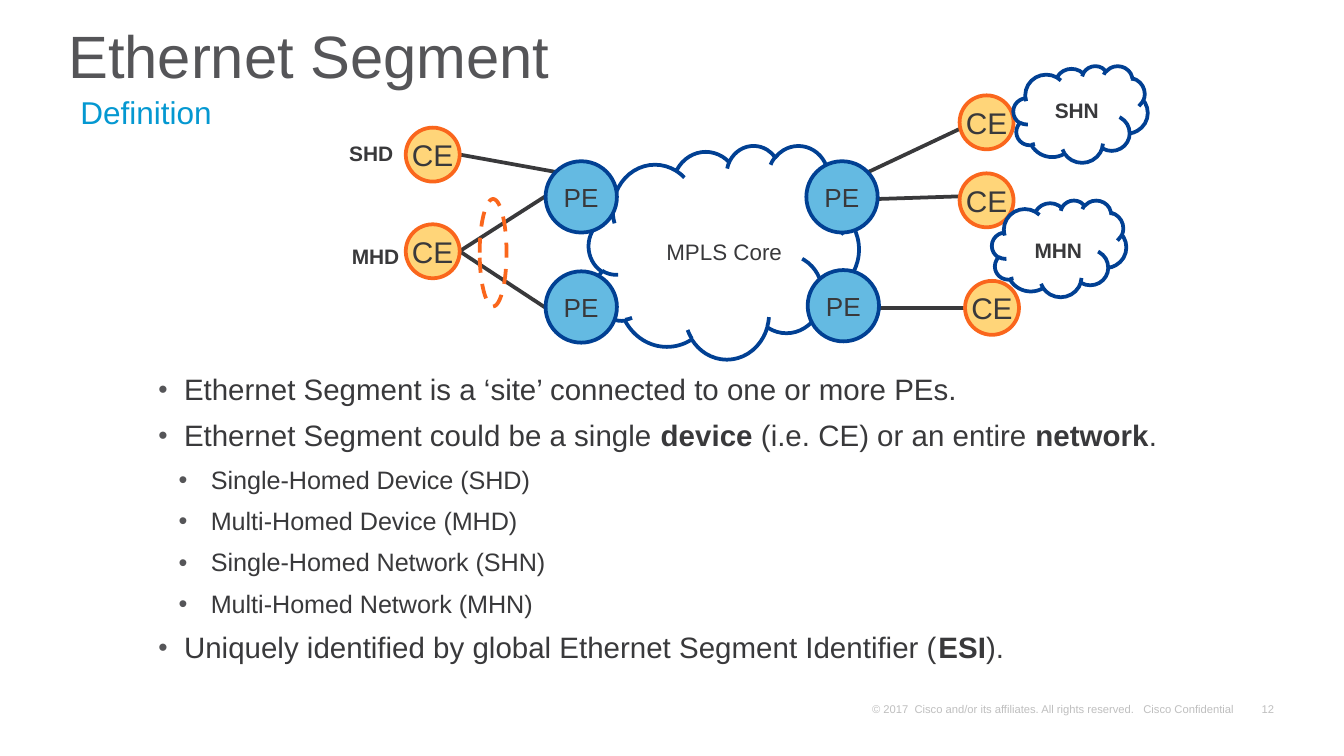
"""Builds the Ethernet Segment definition slide."""
from dataclasses import dataclass

from lxml import etree
from pptx import Presentation
from pptx import util as u
from pptx.dml.color import RGBColor
from pptx.enum import dml, shapes, text
from pptx.oxml import ns

Pt = u.Pt


@dataclass(frozen=True)
class Theme:
    font: str = "Arial"
    ink: str = "39393B"
    title: str = "555558"
    accent: str = "0498D1"
    footer: str = "BFBFBF"
    pe_fill: str = "64BAE2"
    pe_line: str = "014093"
    ce_fill: str = "FFD579"
    ce_line: str = "FA661C"
    title_size: float = 32
    subtitle_size: float = 16.9
    body_size: float = 15.8
    sub_size: float = 13.5
    ce_size: float = 16
    pe_size: float = 14
    core_size: float = 12
    tag_size: float = 11.2
    footer_size: float = 6
    line: float = 2


T = Theme()
PE_SIZE, CE_SIZE = 38.2, 28.9
PES = [(292.3, 86.4), (292.3, 145.4), (432, 86.4), (432.7, 144.7)]
CES = [(217.4, 120.2), (217.4, 68.4), (514.1, 92.9), (514.1, 51.1), (517, 150.5)]
CLOUDS = [(315.4, 77.8, 144.7, 114.5), (542.9, 35.3, 72, 51.8), (531.4, 107.3, 72, 51.8)]
LINKS = [(246.2, 134.6, 292.3, 105.1), (292.3, 164.9, 246.2, 134.6),
         (246.2, 82.8, 298.1, 92.2), (517.7, 105.1, 470.9, 106.6),
         (470.2, 164.9, 517.7, 164.9), (514.1, 69.1, 465.1, 92.2)]
TAGS = [("MHD", 181.4, 126.7), ("SHD", 180, 72), ("SHN", 558, 49), ("MHN", 547.2, 123.8)]
BULLETS = [
    (0, ["Ethernet Segment is a ‘site’ connected to one or more PEs."]),
    (0, ["Ethernet Segment could be a single ", "device",
         " (i.e. CE) or an entire ", "network", "."]),
    (1, ["Single-Homed Device (SHD)"]),
    (1, ["Multi-Homed Device (MHD)"]),
    (1, ["Single-Homed Network (SHN)"]),
    (1, ["Multi-Homed Network (MHN)"]),
    (0, ["Uniquely identified by global Ethernet Segment Identifier (", "ESI", ")."]),
]


def rgb(value):
    return RGBColor.from_string(value)


def apply(obj, **values):
    for name, value in values.items():
        setattr(obj, name, value)


def add_run(p, content, size, color, bold=False):
    r = p.add_run()
    r.text = content
    apply(r.font, name=T.font, size=Pt(size), bold=bold)
    r.font.color.rgb = rgb(color)


def add_text(s, box, content="", size=T.body_size, color=T.ink, bold=False,
             frame=None, para=None):
    tf = s.shapes.add_textbox(*map(Pt, box)).text_frame
    apply(tf, **{"word_wrap": True, **(frame or {})})
    p = tf.paragraphs[0]
    apply(p, **(para or {}))
    if content:
        add_run(p, content, size, color, bold)
    return tf


def add_outline(s, kind, box, line, fill=None):
    sp = s.shapes.add_shape(kind, *map(Pt, box))
    sp.shadow.inherit = False
    if fill:
        sp.fill.solid()
        sp.fill.fore_color.rgb = rgb(fill)
    else:
        sp.fill.background()
    sp.line.color.rgb = rgb(line)
    sp.line.width = Pt(T.line)
    return sp


def add_node(s, label, left, top, side, size, line, fill):
    sp = add_outline(s, shapes.MSO_SHAPE.OVAL, (left, top, side, side), line, fill)
    tf = sp.text_frame
    apply(tf, word_wrap=False, vertical_anchor=text.MSO_ANCHOR.MIDDLE)
    p = tf.paragraphs[0]
    p.alignment = text.PP_ALIGN.CENTER
    add_run(p, label, size, T.ink)


def add_link(s, ends):
    cn = s.shapes.add_connector(shapes.MSO_CONNECTOR.STRAIGHT, *map(Pt, ends))
    cn.line.color.rgb = rgb(T.ink)
    cn.line.width = Pt(T.line)
    etree.SubElement(cn._element.spPr, ns.qn("a:effectLst"))


def add_bullet(p, level):
    pPr = p._p.get_or_add_pPr()
    margin, hang = [(13.7, 13.7), (28.1, 17.3)][level]
    pPr.set("marL", str(Pt(margin)))
    pPr.set("indent", str(-Pt(hang)))
    color = etree.SubElement(pPr, ns.qn("a:buClr"))
    etree.SubElement(color, ns.qn("a:srgbClr"), val=T.title)
    if level == 0:
        etree.SubElement(pPr, ns.qn("a:buSzPct"), val="90000")
    etree.SubElement(pPr, ns.qn("a:buFont"), typeface=T.font)
    etree.SubElement(pPr, ns.qn("a:buChar"), char="•")


def add_bullets(s, box):
    tf = add_text(s, box)
    for i, (level, runs) in enumerate(BULLETS):
        p = tf.add_paragraph() if i else tf.paragraphs[0]
        add_bullet(p, level)
        apply(p, level=level, line_spacing=0.95, space_before=Pt(6.8 if i else 0))
        for j, content in enumerate(runs):
            add_run(p, content, T.sub_size if level else T.body_size, T.ink, j % 2 == 1)


def add_footer(s):
    frame = dict(margin_left=Pt(5), margin_right=Pt(5), margin_top=Pt(2.2),
                 margin_bottom=Pt(2.2), vertical_anchor=text.MSO_ANCHOR.BOTTOM)
    add_text(s, (670.3, 373.7, 17.3, 12.2), "12", T.footer_size, T.footer,
             frame={**frame, "word_wrap": False}, para={"alignment": text.PP_ALIGN.RIGHT})
    add_text(s, (462.2, 373.7, 209.5, 12.2),
             "© 2017  Cisco and/or its affiliates. All rights reserved.   Cisco Confidential",
             T.footer_size, T.footer, frame=frame)


def add_diagram(s):
    add_text(s, (349.9, 123.8, 77, 21.6), "MPLS Core", T.core_size,
             frame={"word_wrap": False})
    for box in CLOUDS[:1]:
        add_outline(s, shapes.MSO_SHAPE.CLOUD, box, T.pe_line)
    for ends in LINKS:
        add_link(s, ends)
    for left, top in PES:
        add_node(s, "PE", left, top, PE_SIZE, T.pe_size, T.pe_line, T.pe_fill)
    for left, top in CES:
        add_node(s, "CE", left, top, CE_SIZE, T.ce_size, T.ce_line, T.ce_fill)
    bundle = add_outline(s, shapes.MSO_SHAPE.OVAL, (257, 106.6, 14.4, 57.6), T.ce_line)
    bundle.line.dash_style = dml.MSO_LINE.DASH
    for box in CLOUDS[1:]:
        add_outline(s, shapes.MSO_SHAPE.CLOUD, box, T.pe_line)
    for label, left, top in TAGS:
        add_text(s, (left, top, 40.3, 20.9), label, T.tag_size, bold=True)


def main():
    prs = Presentation()
    apply(prs, slide_width=Pt(720), slide_height=Pt(405))
    s = prs.slides.add_slide(prs.slide_layouts[6])
    add_footer(s)
    add_text(s, (29.5, -0.7, 614.2, 67.7), "Ethernet Segment", T.title_size, T.title,
             frame={"vertical_anchor": text.MSO_ANCHOR.MIDDLE}, para={"line_spacing": 0.8})
    add_bullets(s, (77.8, 196.6, 620.6, 175))
    add_text(s, (36, 47.5, 614.2, 30.2), "Definition", T.subtitle_size, T.accent,
             para={"line_spacing": 0.95})
    add_diagram(s)
    prs.save("out.pptx")


if __name__ == "__main__":
    main()
